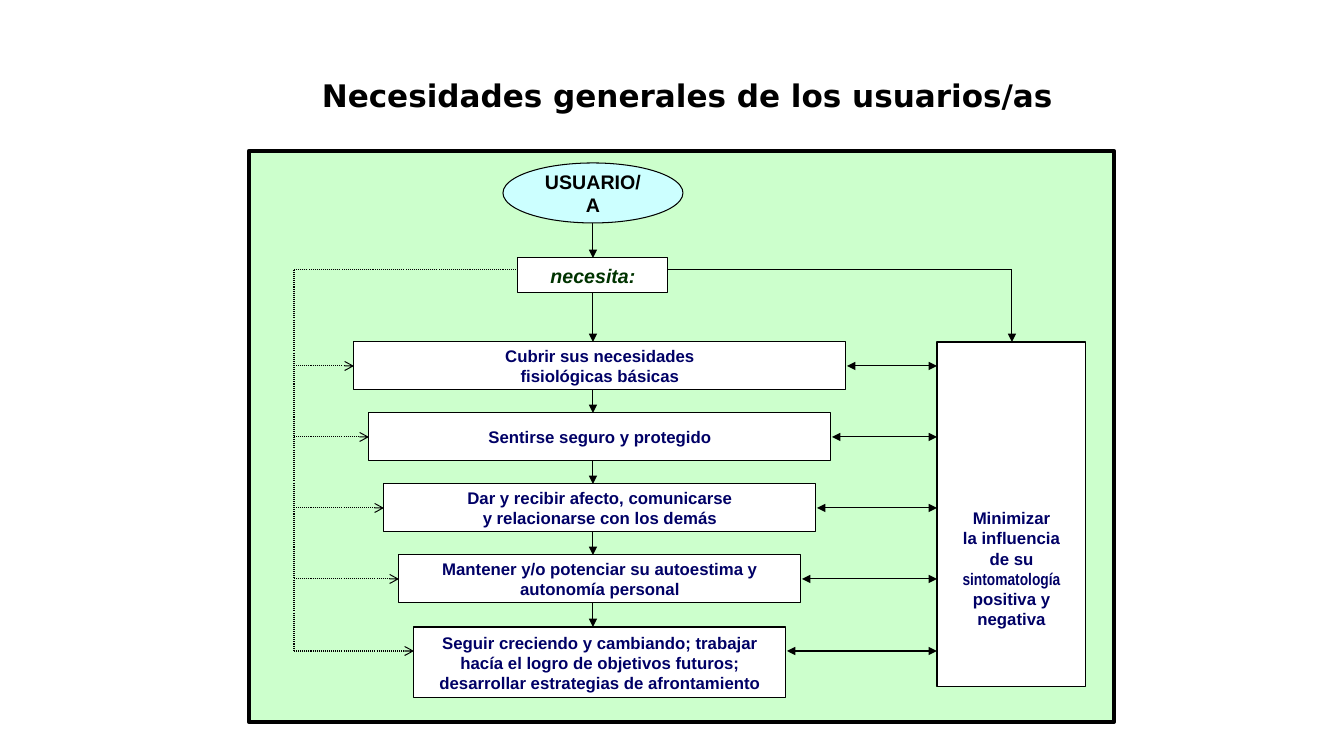
from lxml.etree import SubElement
from pptx import Presentation
from pptx.dml.color import RGBColor
from pptx.enum.dml import MSO_LINE
from pptx.enum.shapes import MSO_CONNECTOR, MSO_SHAPE
from pptx.enum.text import MSO_ANCHOR, MSO_AUTO_SIZE, PP_ALIGN
from pptx.oxml.ns import qn
from pptx.util import Emu, Pt

SCALE = 914400 / 100.8
COLORS = {
    "black": "000000",
    "white": "FFFFFF",
    "panel": "CCFFCC",
    "user": "CCFFFF",
    "green": "003300",
    "navy": "000066",
}


def add_box(kind, bounds, fill, lines=(), size=12, color="navy", line_width=0.75):
    box = page.shapes.add_shape(kind, *[Emu(round(n * SCALE)) for n in bounds])
    box.shadow.inherit = False
    box.fill.solid()
    box.fill.fore_color.rgb = RGBColor.from_string(COLORS[fill])
    box.line.color.rgb = RGBColor.from_string(COLORS["black"])
    box.line.width = Pt(line_width)
    frame = box.text_frame
    frame.word_wrap = True
    frame.vertical_anchor = MSO_ANCHOR.MIDDLE
    frame.margin_top = frame.margin_bottom = 0
    frame.text = "\n".join(lines)
    for para in frame.paragraphs:
        para.alignment = PP_ALIGN.CENTER
        para.font.name = "Arial"
        para.font.size = Pt(size)
        para.font.bold = True
        para.font.color.rgb = RGBColor.from_string(COLORS[color])
    return box


def add_line(x1, y1, x2, y2, head=None, tail=None, dotted=False):
    ends = [Emu(round(n * SCALE)) for n in (x1, y1, x2, y2)]
    link = page.shapes.add_connector(MSO_CONNECTOR.STRAIGHT, *ends)
    link.line.color.rgb = RGBColor.from_string(COLORS["black"])
    link.line.width = Pt(0.75)
    if dotted:
        link.line.dash_style = MSO_LINE.ROUND_DOT
    properties = link._element.spPr
    for tag, arrow in (("a:headEnd", head), ("a:tailEnd", tail)):
        if arrow:
            SubElement(properties.find(qn("a:ln")), qn(tag), type=arrow)
    SubElement(properties, qn("a:effectLst"))


deck = Presentation()
deck.slide_width = Emu(round(1344 * SCALE))
deck.slide_height = Emu(round(756 * SCALE))
page = deck.slides.add_slide(deck.slide_layouts[5])

title = page.shapes.title
title.left, title.top, title.width, title.height = [
    Emu(round(n * SCALE)) for n in (259, 79, 857, 42)
]
title.text_frame.text = "Necesidades generales de los usuarios/as"
title.text_frame.auto_size = MSO_AUTO_SIZE.NONE
title.text_frame.vertical_anchor = MSO_ANCHOR.TOP
para = title.text_frame.paragraphs[0]
para.alignment = PP_ALIGN.CENTER
para.line_spacing = 0.8
para.font.name = "DejaVu Sans"
para.font.size = Pt(22.2)
para.font.bold = True
para.font.color.rgb = RGBColor.from_string(COLORS["black"])

add_box(MSO_SHAPE.RECTANGLE, (249, 151, 865, 571), "panel", line_width=3)
add_box(MSO_SHAPE.OVAL, (503, 163, 180, 60), "user", ["USUARIO/A"], 14, "black")
needs_label = add_box(
    MSO_SHAPE.RECTANGLE, (518, 258, 150, 35), "white", ["necesita:"], 14, "green"
)
needs_label.text_frame.paragraphs[0].font.italic = True

symptoms = add_box(
    MSO_SHAPE.RECTANGLE,
    (937, 342, 149, 345),
    "white",
    ["Minimizar", "la influencia", "de su "],
)
symptoms.text_frame.vertical_anchor = MSO_ANCHOR.BOTTOM
symptoms.text_frame.margin_bottom = Emu(round(58 * SCALE))
last_para = symptoms.text_frame.paragraphs[-1]
for words, font in (("sintomatología", "Arial Narrow"), (" positiva y negativa", "Arial")):
    span = last_para.add_run()
    span.text = words
    span.font.name = font

NEEDS = [
    ["Cubrir sus necesidades", "fisiológicas básicas"],
    ["Sentirse seguro y protegido"],
    ["Dar y recibir afecto, comunicarse", "y relacionarse con los demás"],
    ["Mantener y/o potenciar su autoestima y", "autonomía personal"],
    [
        "Seguir creciendo y cambiando; trabajar hacía el logro de objetivos "
        "futuros; desarrollar estrategias de afrontamiento"
    ],
]
trunk_x, left_x, right_x = 593, 294, 1012
branch_y = 270

add_line(trunk_x, 223, trunk_x, 258, tail="triangle")
previous_bottom = 293
for index, lines in enumerate(NEEDS):
    left = 354 + 15 * index
    right = 846 - 15 * index
    top = 342 + 285 * index // 4
    height = 71 if lines is NEEDS[-1] else 48
    middle = top + 24
    add_box(MSO_SHAPE.RECTANGLE, (left, top, right - left, height), "white", lines)
    add_line(trunk_x, previous_bottom, trunk_x, top, tail="triangle")
    add_line(right + 1, middle, 937, middle, head="triangle", tail="triangle")
    add_line(left_x, middle, left, middle, tail="arrow", dotted=True)
    previous_bottom = top + height

add_line(668, branch_y, right_x, branch_y)
add_line(right_x, branch_y, right_x, 342, tail="triangle")
add_line(518, branch_y, left_x, branch_y, dotted=True)
add_line(left_x, branch_y, left_x, middle, dotted=True)

deck.save("out.pptx")
